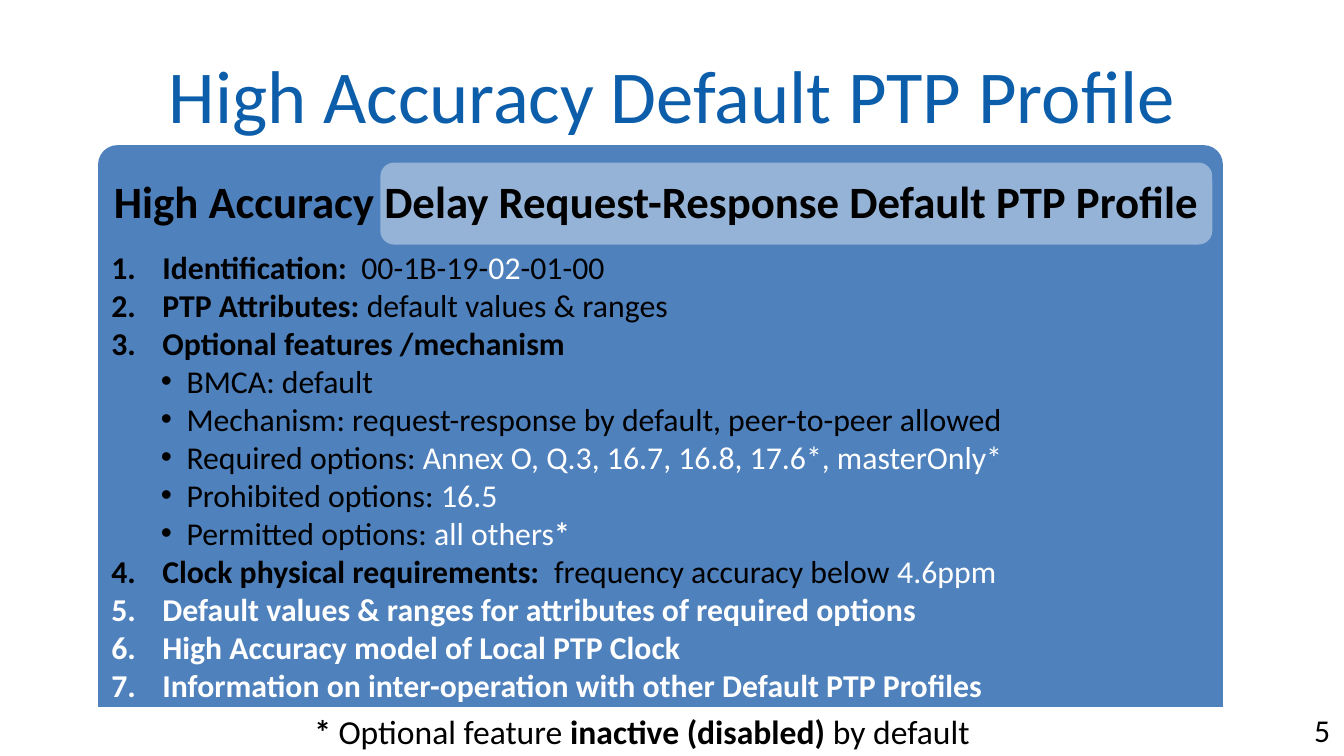
"""Build the High Accuracy Default PTP Profile slide."""
from lxml import etree
from pptx import Presentation
from pptx.dml.color import RGBColor
from pptx.enum.shapes import MSO_SHAPE
from pptx.enum.text import MSO_ANCHOR, PP_ALIGN
from pptx.oxml.ns import qn
from pptx.util import Inches, Pt

ROUND, RECT = MSO_SHAPE.ROUNDED_RECTANGLE, MSO_SHAPE.RECTANGLE
TOP, MIDDLE = MSO_ANCHOR.TOP, MSO_ANCHOR.MIDDLE
LEFT, CENTER = PP_ALIGN.LEFT, PP_ALIGN.CENTER
BLACK, WHITE, BLUE, PALE, INK = "000000", "FFFFFF", "4F81BD", "95B3D7", "0D5EAA"


def color(value):
    """Turn a hex string into a colour."""
    return RGBColor.from_string(value)


def write(para, runs, size):
    """Add (text, colour, bold) runs to a paragraph."""
    for text, ink, bold in runs:
        run = para.add_run()
        run.text = text
        font = run.font
        font.name, font.size, font.bold = "Calibri", Pt(size), bold
        font.color.rgb = color(ink)


deck = Presentation()
deck.slide_width = Inches(10)
deck.slide_height = Inches(10) * 9 // 16
slide = deck.slides.add_slide(deck.slide_layouts[5])

panels = []
for kind, box, fill in [
    (ROUND, (0.73, 1.08, 8.37, 0.87), BLUE),
    (RECT, (0.73, 1.74, 8.37, 3.52), BLUE),
    (ROUND, (2.83, 1.21, 6.19, 0.61), PALE),
]:
    panel = slide.shapes.add_shape(kind, *[Inches(n) for n in box])
    panel.shadow.inherit = False
    panel.fill.solid()
    panel.fill.fore_color.rgb = color(fill)
    panel.line.fill.background()
    panels.append(panel)

title = slide.shapes.title
title.left, title.top = Inches(0.5), Inches(0.23)
title.width, title.height = Inches(9), Inches(0.94)
title.text_frame.vertical_anchor = MIDDLE
head = title.text_frame.paragraphs[0]
head.alignment = CENTER
write(head, [("High Accuracy Default PTP Profile", INK, False)], 40)

items = [
    (0, [("Identification:  ", BLACK, True), ("00-1B-19-", BLACK, False),
         ("02", WHITE, False), ("-01-00", BLACK, False)]),
    (0, [("PTP Attributes: ", BLACK, True),
         ("default values & ranges", BLACK, False)]),
    (0, [("Optional features /mechanism", BLACK, True)]),
    (1, [("BMCA: default", BLACK, False)]),
    (1, [("Mechanism: request-response by default, peer-to-peer allowed",
          BLACK, False)]),
    (1, [("Required options: ", BLACK, False),
         ("Annex O, Q.3, 16.7, 16.8, 17.6*, masterOnly*", WHITE, False)]),
    (1, [("Prohibited options: ", BLACK, False), ("16.5", WHITE, False)]),
    (1, [("Permitted options: ", BLACK, False), ("all others", WHITE, False),
         ("*", WHITE, True)]),
    (0, [("Clock physical requirements:  ", BLACK, True),
         ("frequency accuracy below ", BLACK, False),
         ("4.6ppm", WHITE, False)]),
    (0, [("Default values & ranges for attributes of required options",
          WHITE, True)]),
    (0, [("High Accuracy model of Local PTP Clock", WHITE, True)]),
    (0, [("Information on inter-operation with other Default PTP Profiles",
          WHITE, True)]),
]
marks = [
    (0.38, -0.38, "a:buAutoNum", {"type": "arabicPeriod"}),
    (0.56, -0.19, "a:buChar", {"char": "•"}),
]
frame = panels[1].text_frame
frame.word_wrap = True
frame.vertical_anchor = TOP
frame.margin_top = Inches(0.1)
for index, (level, runs) in enumerate(items):
    para = frame.add_paragraph() if index else frame.paragraphs[0]
    para.alignment = LEFT
    para.level = level
    para.line_spacing = Pt(20.4)
    margin, indent, tag, attrs = marks[level]
    props = para._p.get_or_add_pPr()
    props.set("marL", str(Inches(margin)))
    props.set("indent", str(Inches(indent)))
    font = etree.SubElement(props, qn("a:buFont"))
    font.set("typeface", "Arial" if level else "Calibri")
    etree.SubElement(props, qn(tag), attrs)
    write(para, runs, 17)

for box, size, runs in [
    ((2.24, 5.24, 5.13, 0.4), 18,
     [("*", BLACK, True), (" Optional feature ", BLACK, False),
      ("inactive (disabled)", BLACK, True), (" by default", BLACK, False)]),
    ((0.75, 1.24, 8.64, 0.57), 24,
     [("High Accuracy Delay Request-Response Default PTP Profile",
       BLACK, True)]),
    ((9.68, 5.24, 0.32, 0.39), 17, [("5", BLACK, False)]),
]:
    label = slide.shapes.add_textbox(*[Inches(n) for n in box])
    label.text_frame.word_wrap = True
    write(label.text_frame.paragraphs[0], runs, size)

deck.save("out.pptx")
